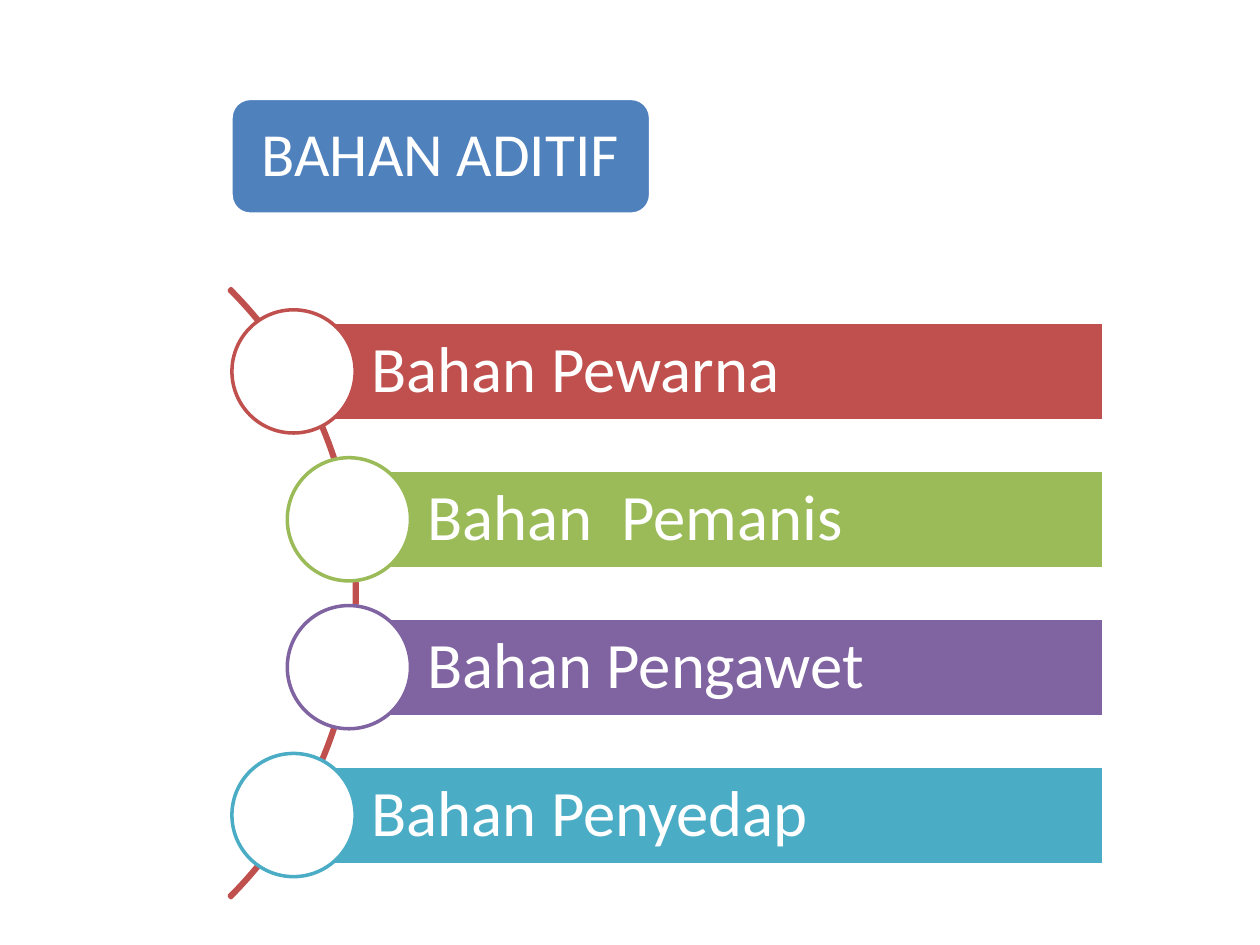
import math
from dataclasses import dataclass

import pptx
import pptx.dml.color
import pptx.enum.shapes
import pptx.enum.text
import pptx.util

Pt = pptx.util.Pt
Kind = pptx.enum.shapes.MSO_SHAPE


@dataclass(frozen=True)
class Theme:
    """Colours, font and type sizes of the slide."""
    white: str = "FFFFFF"
    blue: str = "4F81BD"
    red: str = "C0504D"
    green: str = "9BBB59"
    purple: str = "8064A2"
    teal: str = "4BACC6"
    font: str = "Calibri"
    head: float = 35
    body: float = 37
    line: float = 2


THEME = Theme()
ITEMS = (
    ("Bahan Pewarna", THEME.red),
    ("Bahan  Pemanis", THEME.green),
    ("Bahan Pengawet", THEME.purple),
    ("Bahan Penyedap", THEME.teal),
)


def tint(code):
    """Return the colour for a hex code."""
    return pptx.dml.color.RGBColor.from_string(code)


def draw(slide, kind, box, fill, edge):
    """Add a preset shape; a fill of None leaves it hollow."""
    shape = slide.shapes.add_shape(kind, *(Pt(n) for n in box))
    shape.shadow.inherit = False
    if fill is None:
        shape.fill.background()
    else:
        shape.fill.solid()
        shape.fill.fore_color.rgb = tint(fill)
    shape.line.color.rgb = tint(edge)
    shape.line.width = Pt(THEME.line)
    return shape


def write(shape, text, size, left, pad):
    """Set one left-aligned line of white text in a shape."""
    frame = shape.text_frame
    frame.word_wrap = True
    frame.vertical_anchor = pptx.enum.text.MSO_ANCHOR.MIDDLE
    frame.margin_left = Pt(left)
    frame.margin_right = frame.margin_top = frame.margin_bottom = Pt(pad)
    para = frame.paragraphs[0]
    para.alignment = pptx.enum.text.PP_ALIGN.LEFT
    para.line_spacing = 0.9
    run = para.add_run()
    run.text = text
    run.font.name = THEME.font
    run.font.size = Pt(size)
    run.font.color.rgb = tint(THEME.white)


def title(slide, box):
    """Place the rounded heading in its box."""
    shape = draw(slide, Kind.ROUNDED_RECTANGLE, box, THEME.blue, THEME.white)
    write(shape, "BAHAN ADITIF", THEME.head, 14.4, 14.4)


def curve(slide, box):
    """Place the arc and the bands that start along it."""
    left, top, width, height = box
    half = height / 2
    mid_x, mid_y = left - half, top + half
    rad = half * math.sqrt(2)
    ring = (mid_x - rad, mid_y - rad, 2 * rad, 2 * rad)
    arc = draw(slide, Kind.BLOCK_ARC, ring, None, THEME.red)
    for i, value in enumerate((189, 27, 0.003)):
        arc.adjustments[i] = value

    pitch = 84.5
    band, dot = pitch * 2 / 3, pitch * 5 / 6
    for i, (text, color) in enumerate(ITEMS):
        drop = (i - (len(ITEMS) - 1) / 2) * pitch
        x = mid_x + math.sqrt((rad - 1) ** 2 - drop ** 2)
        y = mid_y + drop
        bar = draw(slide, Kind.RECTANGLE,
                   (x, y - band / 2, left + width - x, band),
                   color, THEME.white)
        write(bar, text, THEME.body, 44.6, 7.2)
        draw(slide, Kind.OVAL, (x - dot / 2, y - dot / 2, dot, dot),
             THEME.white, color)


def main():
    """Build and save the slide."""
    deck = pptx.Presentation()
    deck.slide_width, deck.slide_height = Pt(720), Pt(540)
    slide = deck.slides.add_slide(deck.slide_layouts[6])
    title(slide, (132, 56.2, 239.8, 66.2))
    curve(slide, (132, 165, 498.7, 348))
    deck.save("out.pptx")


if __name__ == "__main__":
    main()
